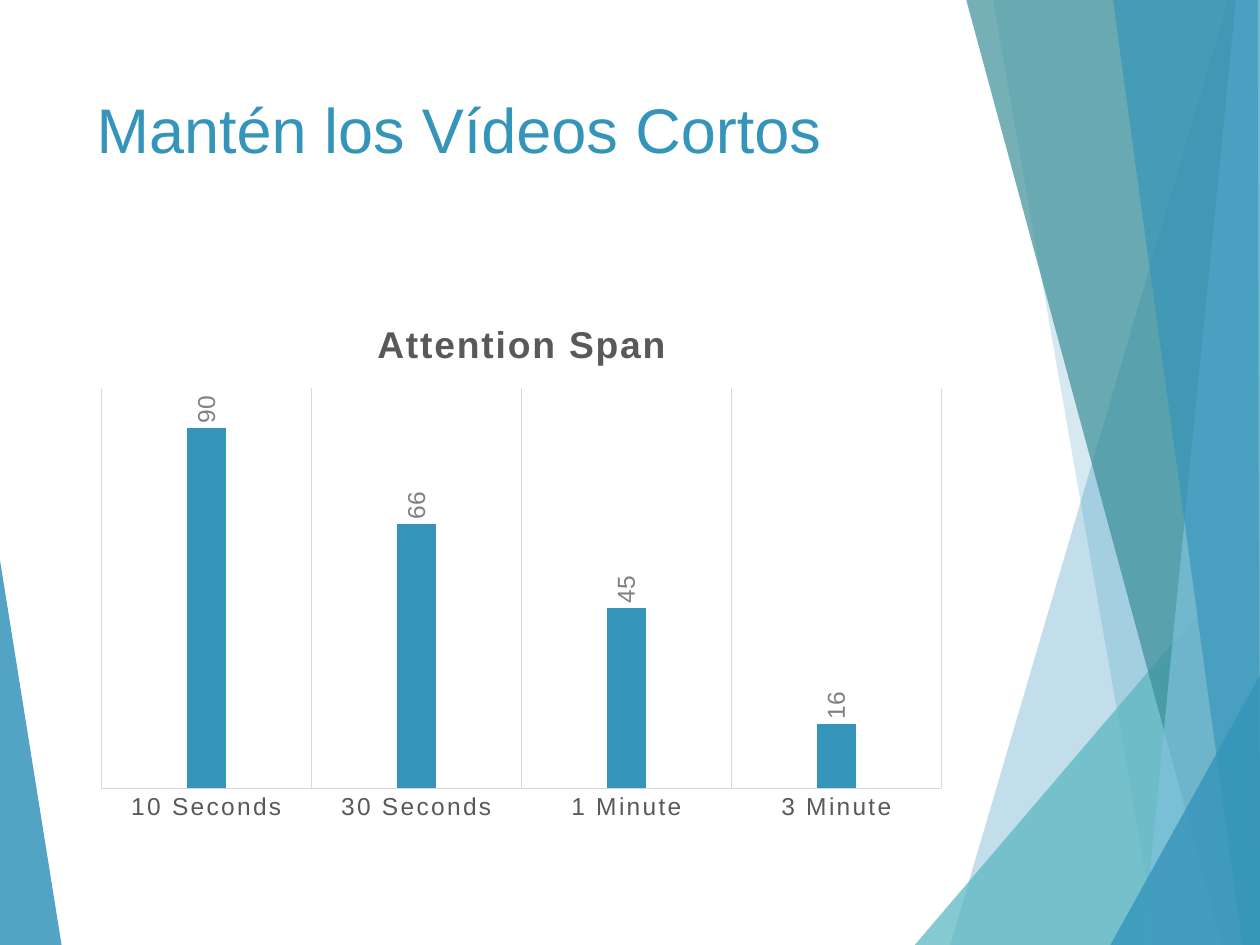
from dataclasses import dataclass

from lxml.etree import SubElement
from pptx import Presentation
from pptx.chart.chart import Chart
from pptx.chart.data import CategoryChartData
from pptx.dml.color import RGBColor
from pptx.enum.chart import XL_CHART_TYPE as ChartType
from pptx.enum.chart import XL_LABEL_POSITION as LabelPosition
from pptx.enum.chart import XL_TICK_LABEL_POSITION as TickLabels
from pptx.enum.chart import XL_TICK_MARK as TickMark
from pptx.enum.shapes import MSO_CONNECTOR as Connector
from pptx.enum.text import MSO_ANCHOR as Anchor
from pptx.enum.text import PP_ALIGN as Align
from pptx.oxml import parse_xml
from pptx.oxml.ns import nsdecls, qn
from pptx.shapes.shapetree import SlideShapes
from pptx.text.text import Font, TextFrame
from pptx.util import Pt

BLUE = RGBColor(0x34, 0x94, 0xBA)
PALE_BLUE = RGBColor(0x7F, 0xC1, 0xDB)
AQUA = RGBColor(0x58, 0xB6, 0xC0)
TEAL = RGBColor(0x3A, 0x8F, 0x98)
WHITE = RGBColor(0xFF, 0xFF, 0xFF)
BLACK = RGBColor(0x00, 0x00, 0x00)
DARK_GRAY = RGBColor(0x59, 0x59, 0x59)
GRAY = RGBColor(0x80, 0x80, 0x80)
LIGHT_GRAY = RGBColor(0xD9, 0xD9, 0xD9)

WIDTH, HEIGHT = 720, 540
LEFT, CONTENT_WIDTH = 48, 500
Point = tuple[float, float]


@dataclass(frozen=True)
class Facet:
    corners: tuple[Point, ...]
    color: RGBColor
    opacity: int


@dataclass(frozen=True)
class Ray:
    start: Point
    end: Point


RAYS = (
    Ray((404, HEIGHT), (WIDTH, 329)),
    Ray((554.4, 0), (651, HEIGHT)),
)
BOTTOM_RIGHT, TOP_RIGHT = (WIDTH, HEIGHT), (WIDTH, 0)
FACETS = (
    Facet(((0, 320), (35.2, HEIGHT), (0, HEIGHT)), BLUE, 85),
    Facet(((702, 0), (543, HEIGHT), BOTTOM_RIGHT, TOP_RIGHT), BLUE, 30),
    Facet(((567.4, 0), (661.7, HEIGHT), BOTTOM_RIGHT, TOP_RIGHT), BLUE, 20),
    Facet(((522.7, HEIGHT), (WIDTH, 309), BOTTOM_RIGHT), AQUA, 72),
    Facet(((552.2, 0), (698.4, HEIGHT), BOTTOM_RIGHT, TOP_RIGHT), TEAL, 70),
    Facet(((706.3, 0), (653, HEIGHT), BOTTOM_RIGHT, TOP_RIGHT), PALE_BLUE, 70),
    Facet(((636, 0), (710, HEIGHT), BOTTOM_RIGHT, (718.6, 0)), BLUE, 65),
    Facet(((634.5, HEIGHT), (WIDTH, 386), BOTTOM_RIGHT), BLUE, 80),
)


def draw_ray(shapes: SlideShapes, ray: Ray) -> None:
    ends = [Pt(value) for value in (*ray.start, *ray.end)]
    connector = shapes.add_connector(Connector.STRAIGHT, *ends)
    connector.line.color.rgb = WHITE
    connector.line.width = Pt(0.75)
    SubElement(connector.element.spPr, qn("a:effectLst"))


def draw_facet(shapes: SlideShapes, facet: Facet) -> None:
    start, *others = [(Pt(x), Pt(y)) for x, y in facet.corners]
    builder = shapes.build_freeform(*start)
    builder.add_line_segments(others, close=True)
    shape = builder.convert_to_shape()
    shape.shadow.inherit = False
    shape.line.fill.background()
    shape.fill.solid()
    shape.fill.fore_color.rgb = facet.color
    color_node = shape.element.spPr.find(qn("a:solidFill"))[0]
    SubElement(color_node, qn("a:alpha"), val=str(facet.opacity * 1000))


def style_font(font: Font, size: float, color: RGBColor, bold: bool = False) -> None:
    font.name = "Arial"
    font.size = Pt(size)
    font.bold = bold
    font.color.rgb = color


def write_text(frame: TextFrame, text: str, *, size: float, color: RGBColor,
               bold: bool = False, align: Align = Align.LEFT) -> None:
    paragraph = frame.paragraphs[0]
    paragraph.alignment = align
    run = paragraph.add_run()
    run.text = text
    style_font(run.font, size, color, bold)


def fix_plot_area(chart: Chart, x: float, y: float, w: float, h: float) -> None:
    plot_area = chart.element.find(".//" + qn("c:plotArea"))
    for old in plot_area.findall(qn("c:layout")):
        plot_area.remove(old)
    plot_area.insert(0, parse_xml(
        f'<c:layout {nsdecls("c")}><c:manualLayout><c:layoutTarget val="inner"/>'
        '<c:xMode val="edge"/><c:yMode val="edge"/>'
        f'<c:x val="{x}"/><c:y val="{y}"/><c:w val="{w}"/><c:h val="{h}"/>'
        '</c:manualLayout></c:layout>'))


def draw_attention_chart(shapes: SlideShapes) -> None:
    attention = CategoryChartData()
    attention.categories = ["10 Seconds", "30 Seconds", "1 Minute", "3 Minute"]
    attention.add_series("Attention Span", (90, 66, 45, 16))
    chart = shapes.add_chart(ChartType.COLUMN_CLUSTERED, Pt(LEFT), Pt(170),
                             Pt(CONTENT_WIDTH), Pt(305), attention).chart
    style_font(chart.font, 10, BLACK)
    chart.has_legend = False
    chart.has_title = True
    write_text(chart.chart_title.text_frame, "Attention Span", size=21.3,
               color=DARK_GRAY, bold=True, align=Align.CENTER)
    chart.chart_title.include_in_layout = False

    durations = chart.category_axis
    durations.major_tick_mark = TickMark.NONE
    durations.has_major_gridlines = True
    for line in (durations.format.line, durations.major_gridlines.format.line):
        line.color.rgb = LIGHT_GRAY
        line.width = Pt(0.75)
    style_font(durations.tick_labels.font, 14, DARK_GRAY)

    scores = chart.value_axis
    scores.minimum_scale, scores.maximum_scale = 0, 100
    scores.has_major_gridlines = False
    scores.tick_label_position = TickLabels.NONE
    scores.visible = False

    columns = chart.plots[0]
    columns.vary_by_categories = False
    columns.gap_width, columns.overlap = 444, -90
    span = columns.series[0]
    span.format.fill.solid()
    span.format.fill.fore_color.rgb = BLUE
    labels = span.data_labels
    labels.show_value = True
    labels.position = LabelPosition.OUTSIDE_END
    style_font(labels.font, 14, GRAY)

    for body in chart.element.xpath(".//c:dLbls/c:txPr/a:bodyPr"):
        body.set("rot", "-5400000")
        body.set("vert", "horz")
    for properties in chart.element.xpath(
            ".//c:title//a:rPr | .//c:catAx/c:txPr//a:defRPr"):
        properties.set("spc", "120")
    fix_plot_area(chart, 0.02, 0.17, 0.96, 0.75)


def main() -> None:
    deck = Presentation()
    deck.slide_width, deck.slide_height = Pt(WIDTH), Pt(HEIGHT)
    slide = deck.slides.add_slide(deck.slide_layouts[5])
    for ray in RAYS:
        draw_ray(slide.shapes, ray)
    for facet in FACETS:
        draw_facet(slide.shapes, facet)

    heading = slide.shapes.title
    heading.left, heading.top = Pt(LEFT), Pt(48)
    heading.width, heading.height = Pt(CONTENT_WIDTH), Pt(104)
    heading.text_frame.vertical_anchor = Anchor.TOP
    write_text(heading.text_frame, "Mantén los Vídeos Cortos", size=36, color=BLUE)
    draw_attention_chart(slide.shapes)
    deck.save("out.pptx")


if __name__ == "__main__":
    main()
